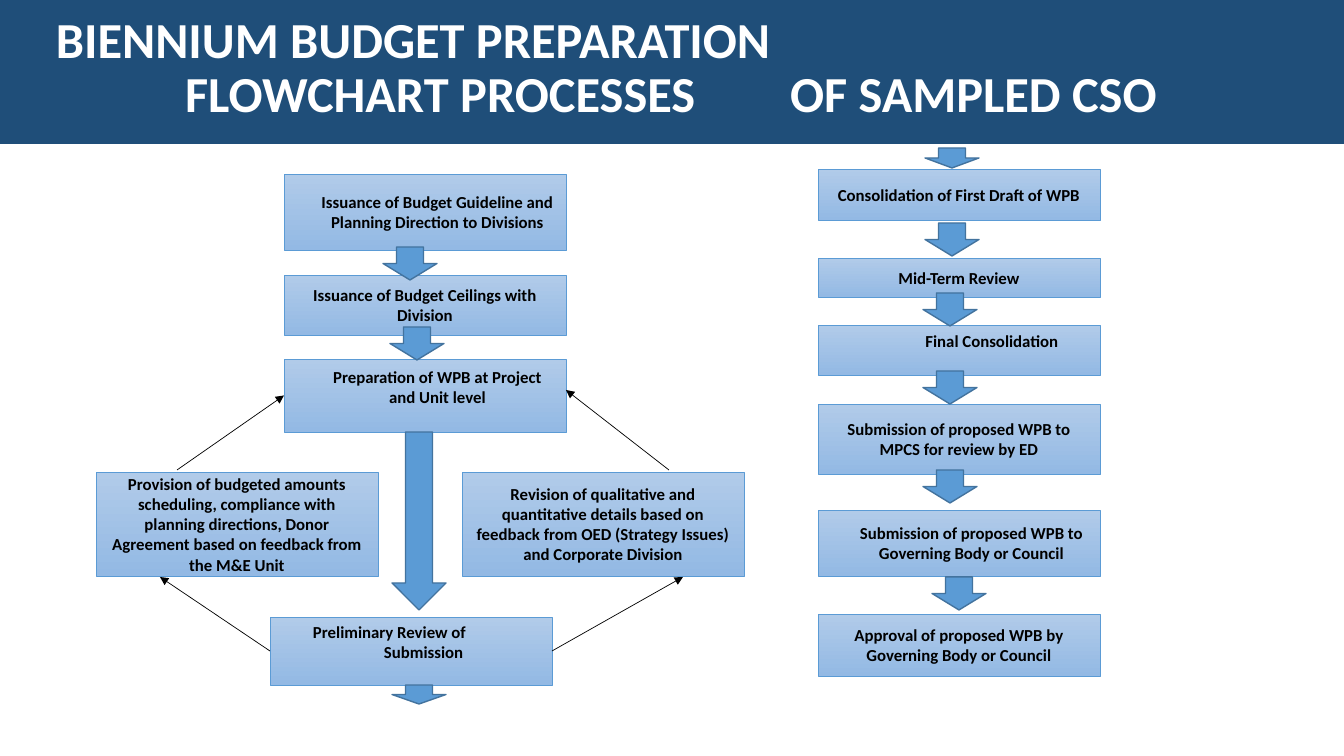
"""Build the budget preparation flowchart slide."""
from lxml import etree
from pptx import Presentation
from pptx.dml.color import RGBColor
from pptx.enum.shapes import MSO_CONNECTOR, MSO_SHAPE
from pptx.enum.text import MSO_ANCHOR, PP_ALIGN
from pptx.oxml.ns import qn
from pptx.util import Pt

RECTANGLE, DOWN_ARROW = MSO_SHAPE.RECTANGLE, MSO_SHAPE.DOWN_ARROW
STRAIGHT = MSO_CONNECTOR.STRAIGHT
MIDDLE = MSO_ANCHOR.MIDDLE
LEFT, CENTER = PP_ALIGN.LEFT, PP_ALIGN.CENTER
LEFT_SIDE, RIGHT_SIDE = 1, 3

THEME = {
    "font": "Calibri",
    "title_size": 36,
    "box_size": 12,
    "banner": RGBColor.from_string("1F4E79"),
    "title": RGBColor.from_string("FFFFFF"),
    "text": RGBColor.from_string("000000"),
    "box_top": RGBColor.from_string("B1CBE9"),
    "box_bottom": RGBColor.from_string("93B9E4"),
    "box_line": RGBColor.from_string("5B9BD5"),
    "arrow": RGBColor.from_string("5B9BD5"),
    "arrow_line": RGBColor.from_string("43739E"),
    "connector": RGBColor.from_string("000000"),
}


def px(*lengths):
    """Turn pixel lengths into EMU."""
    return [round(length * 914400 / 100.8) for length in lengths]


def write(shape, text, size=THEME["box_size"], color=THEME["text"], align=CENTER,
          indent=0, rise=0, tabs=(), spacing=1.0):
    """Write bold lines of text, moved right by an indent and up by a rise."""
    frame = shape.text_frame
    frame.word_wrap = True
    frame.vertical_anchor = MIDDLE
    frame.margin_left, frame.margin_right = px(10 + indent, 10)
    frame.margin_top, frame.margin_bottom = px(5, 5 + 2 * rise)
    for number, line in enumerate(text.split("\n")):
        paragraph = frame.add_paragraph() if number else frame.paragraphs[0]
        paragraph.alignment = align
        paragraph.line_spacing = spacing
        run = paragraph.add_run()
        run.text = line
        run.font.name = THEME["font"]
        run.font.size = Pt(size)
        run.font.bold = True
        run.font.color.rgb = color
        if tabs:
            tab_list = etree.SubElement(paragraph._p.get_or_add_pPr(), qn("a:tabLst"))
            for position in px(*tabs):
                etree.SubElement(tab_list, qn("a:tab"), pos=str(position), algn="l")


presentation = Presentation()
presentation.slide_width, presentation.slide_height = px(1344, 756)
slide = presentation.slides.add_slide(presentation.slide_layouts[6])

banner = slide.shapes.add_shape(RECTANGLE, *px(0, 0, 1344, 144))
banner.shadow.inherit = False
banner.fill.solid()
banner.fill.fore_color.rgb = THEME["banner"]
banner.line.fill.background()
write(banner, "BIENNIUM BUDGET PREPARATION\n\tFLOWCHART PROCESSES\tOF SAMPLED CSO",
      size=THEME["title_size"], color=THEME["title"], align=LEFT,
      indent=46, rise=3, tabs=(129, 734), spacing=0.9)

BOXES = {
    "guideline": (284, 174, 76, "Issuance of Budget Guideline and Planning Direction to Divisions",
                  {"indent": 25}),
    "ceilings": (284, 275, 60, "Issuance of Budget Ceilings with Division", {}),
    "preparation": (284, 359, 73, "Preparation of WPB at Project and Unit level",
                    {"indent": 25, "rise": 9}),
    "preliminary": (270, 617, 68, "Preliminary Review of\n\tSubmission",
                    {"align": LEFT, "indent": 33, "rise": 9, "tabs": (71,)}),
    "consolidation": (818, 169, 51, "Consolidation of First Draft of WPB", {}),
    "mid_term": (818, 258, 39, "Mid-Term Review", {}),
    "final": (818, 325, 50, "Final Consolidation", {"indent": 66, "rise": 9}),
    "submission": (818, 404, 70, "Submission of proposed WPB to MPCS for review by ED", {}),
    "council": (818, 510, 66, "Submission of proposed WPB to Governing Body or Council",
                {"indent": 25}),
    "approval": (818, 614, 62, "Approval of proposed WPB by Governing Body or Council", {}),
    "provision": (96, 472, 104, "Provision of budgeted amounts scheduling, compliance with "
                  "planning directions, Donor Agreement based on feedback from the M&E Unit", {}),
    "revision": (462, 472, 104, "Revision of qualitative and quantitative details based on "
                 "feedback from OED (Strategy Issues) and Corporate Division", {}),
}
boxes = {}
for name, (left, top, height, text, text_format) in BOXES.items():
    box = slide.shapes.add_shape(RECTANGLE, *px(left, top, 282, height))
    box.shadow.inherit = False
    box.fill.gradient()
    box.fill.gradient_angle = 270
    for stop, color in zip(box.fill.gradient_stops, (THEME["box_top"], THEME["box_bottom"])):
        stop.color.rgb = color
    box.line.color.rgb = THEME["box_line"]
    box.line.width = Pt(0.5)
    write(box, text, **text_format)
    boxes[name] = box

ARROWS = [
    (383, 247, 33), (390, 327, 33), (392, 432, 178), (392, 685, 19),
    (925, 148, 20), (925, 223, 33), (923, 293, 33), (923, 371, 33),
    (923, 470, 33), (932, 577, 33),
]
for left, top, height in ARROWS:
    arrow = slide.shapes.add_shape(DOWN_ARROW, *px(left, top, 54, height))
    arrow.shadow.inherit = False
    arrow.fill.solid()
    arrow.fill.fore_color.rgb = THEME["arrow"]
    arrow.line.color.rgb = THEME["arrow_line"]
    arrow.line.width = Pt(1)

FEEDBACK_LINES = [
    ((177, 470, 284, 395), None, ("preparation", LEFT_SIDE)),
    ((669, 470, 566, 390), None, None),
    ((270, 651, 160, 577), ("preliminary", LEFT_SIDE), None),
    ((552, 651, 683, 577), ("preliminary", RIGHT_SIDE), None),
]
for ends, source, target in FEEDBACK_LINES:
    connector = slide.shapes.add_connector(STRAIGHT, *px(*ends))
    if source:
        connector.begin_connect(boxes[source[0]], source[1])
    if target:
        connector.end_connect(boxes[target[0]], target[1])
    connector.line.color.rgb = THEME["connector"]
    connector.line.width = Pt(0.5)
    etree.SubElement(connector.line._get_or_add_ln(), qn("a:tailEnd"), type="triangle")
    etree.SubElement(connector._element.spPr, qn("a:effectLst"))

presentation.save("out.pptx")
